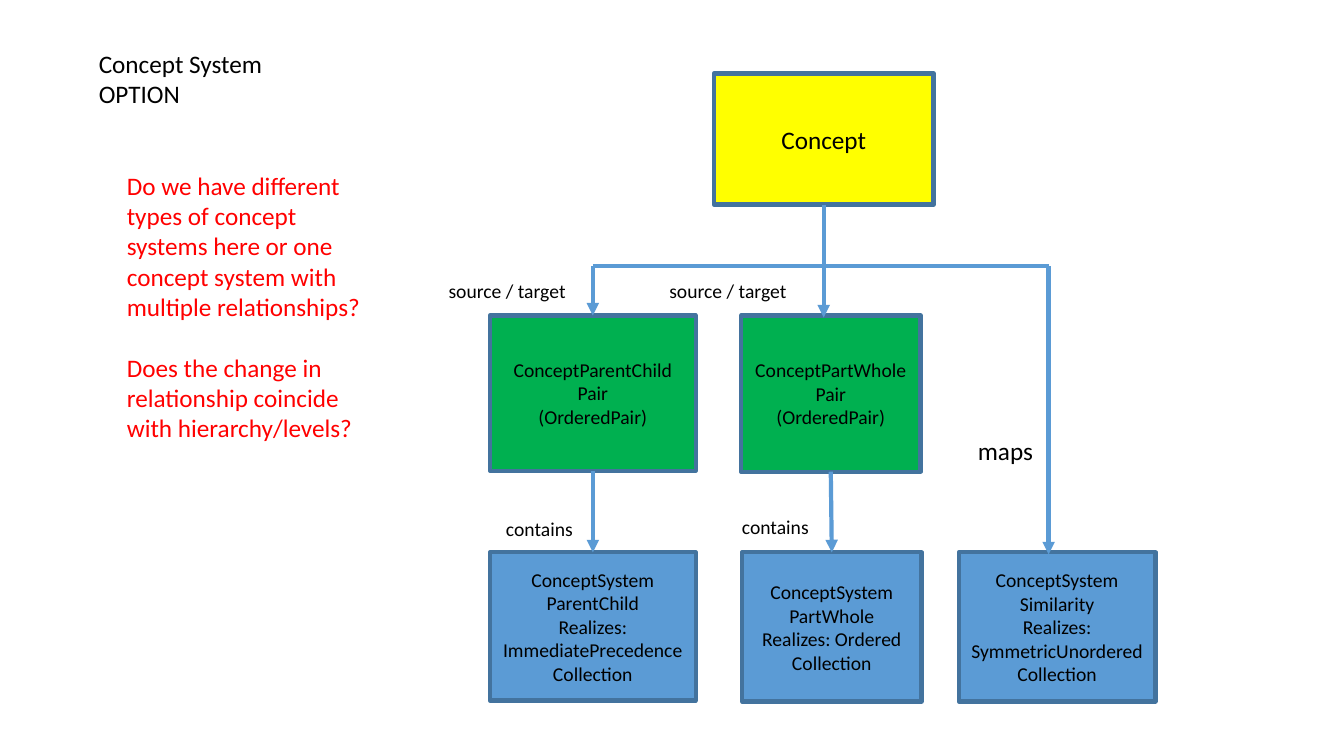
from dataclasses import dataclass
from typing import Optional

import pptx
import pptx.dml.color
import pptx.enum.shapes
import pptx.enum.text
import pptx.oxml.ns
import pptx.util
from lxml import etree

RGB = pptx.dml.color.RGBColor
ALIGN = pptx.enum.text.PP_ALIGN
ANCHOR = pptx.enum.text.MSO_ANCHOR
FIT = pptx.enum.text.MSO_AUTO_SIZE

BLACK = RGB(0x00, 0x00, 0x00)
RED = RGB(0xFF, 0x00, 0x00)
YELLOW = RGB(0xFF, 0xFF, 0x00)
GREEN = RGB(0x00, 0xB0, 0x50)
BLUE = RGB(0x5B, 0x9B, 0xD5)
EDGE = RGB(0x43, 0x73, 0x9E)

FONT = "Calibri"
SCALE = 9144  # EMU per px, at 100 px to the inch
TOP, BOTTOM = 0, 2  # connection sites of a rectangle


@dataclass
class Box:
    key: str
    text: str
    left: int
    top: int
    width: int
    height: int
    fill: RGB
    size: int = 14


@dataclass
class Label:
    text: str
    left: int
    top: int
    width: int
    height: int
    size: int = 14
    color: RGB = BLACK
    wrap: bool = True
    gap: int = 0


@dataclass
class Link:
    x1: int
    y1: int
    x2: int
    y2: int
    start: Optional[str] = None
    end: Optional[str] = None
    arrow: bool = True


TITLE = Label("Concept System\nOPTION", 88, 43, 184, 71, 18, wrap=False)

BOXES = [
    Box("concept", "Concept", 708, 73, 218, 130, YELLOW, 18),
    Box("child pair", "ConceptParentChild Pair\n(OrderedPair)", 486, 313, 204, 154, GREEN),
    Box("whole pair", "ConceptPartWholePair\n(OrderedPair)", 735, 313, 178, 155, GREEN),
    Box("child", "ConceptSystem\nParentChild\nRealizes: ImmediatePrecedence Collection",
        486, 548, 204, 147, BLUE),
    Box("whole", "ConceptSystem PartWhole\nRealizes: Ordered Collection",
        736, 548, 178, 148, BLUE),
    Box("similar", "ConceptSystem\nSimilarity\nRealizes: SymmetricUnordered Collection",
        951, 548, 195, 148, BLUE),
]

LINKS = [
    Link(817, 203, 817, 315, start="concept"),
    Link(588, 264, 1040, 264, arrow=False),
    Link(588, 264, 588, 313, end="child pair"),
    Link(1040, 264, 1040, 550),
    Link(588, 467, 588, 548, "child pair", "child"),
    Link(824, 468, 825, 548, "whole pair", "whole"),
]

LABELS = [
    Label("source / target", 435, 272, 181, 34),
    Label("source / target", 654, 272, 150, 34),
    Label("contains", 492, 508, 100, 34),
    Label("contains", 726, 506, 103, 34),
    Label("maps", 960, 427, 75, 40, 18, wrap=False),
    Label("Do we have different types of concept systems here or one concept system "
          "with multiple relationships?\n"
          "Does the change in relationship coincide with hierarchy/levels?",
          116, 164, 270, 283, 18, RED, gap=22),
]


def px(count: int) -> int:
    return pptx.util.Emu(count * SCALE)


def write(frame, text: str, size: int, color: RGB, align, gap: int = 0) -> None:
    frame.text = text
    for rank, para in enumerate(frame.paragraphs):
        para.alignment = align
        if gap and rank:
            para.space_before = pptx.util.Pt(gap)
        for run in para.runs:
            run.font.name = FONT
            run.font.size = pptx.util.Pt(size)
            run.font.color.rgb = color


def fill_label(shape, label: Label) -> None:
    frame = shape.text_frame
    write(frame, label.text, label.size, label.color, ALIGN.LEFT, label.gap)
    frame.word_wrap = label.wrap
    frame.auto_size = FIT.SHAPE_TO_FIT_TEXT
    frame.vertical_anchor = ANCHOR.TOP


def draw_box(slide, box: Box):
    shape = slide.shapes.add_shape(
        pptx.enum.shapes.MSO_SHAPE.RECTANGLE,
        px(box.left), px(box.top), px(box.width), px(box.height))
    shape.shadow.inherit = False
    shape.fill.solid()
    shape.fill.fore_color.rgb = box.fill
    shape.line.color.rgb = EDGE
    shape.line.width = pptx.util.Pt(3)
    shape.text_frame.word_wrap = True
    shape.text_frame.vertical_anchor = ANCHOR.MIDDLE
    write(shape.text_frame, box.text, box.size, BLACK, ALIGN.CENTER)
    return shape


def draw_link(slide, link: Link, shapes: dict) -> None:
    line = slide.shapes.add_connector(
        pptx.enum.shapes.MSO_CONNECTOR.STRAIGHT,
        px(link.x1), px(link.y1), px(link.x2), px(link.y2))
    line.line.color.rgb = BLUE
    line.line.width = pptx.util.Pt(3)
    if link.start:
        line.begin_connect(shapes[link.start], BOTTOM)
    if link.end:
        line.end_connect(shapes[link.end], TOP)
    props = line._element.spPr
    qn = pptx.oxml.ns.qn
    if link.arrow:
        etree.SubElement(props.find(qn("a:ln")), qn("a:tailEnd"), type="triangle")
    etree.SubElement(props, qn("a:effectLst"))


def main() -> None:
    deck = pptx.Presentation()
    deck.slide_width, deck.slide_height = px(1333), px(750)
    slide = deck.slides.add_slide(deck.slide_layouts[5])

    # Title
    title = slide.shapes.title
    title.left, title.top = px(TITLE.left), px(TITLE.top)
    title.width, title.height = px(TITLE.width), px(TITLE.height)
    fill_label(title, TITLE)

    # Boxes and the links between them
    shapes = {box.key: draw_box(slide, box) for box in BOXES}
    for link in LINKS:
        draw_link(slide, link, shapes)

    # Link labels and open questions
    for label in LABELS:
        field = slide.shapes.add_textbox(
            px(label.left), px(label.top), px(label.width), px(label.height))
        fill_label(field, label)

    deck.save("out.pptx")


if __name__ == "__main__":
    main()
